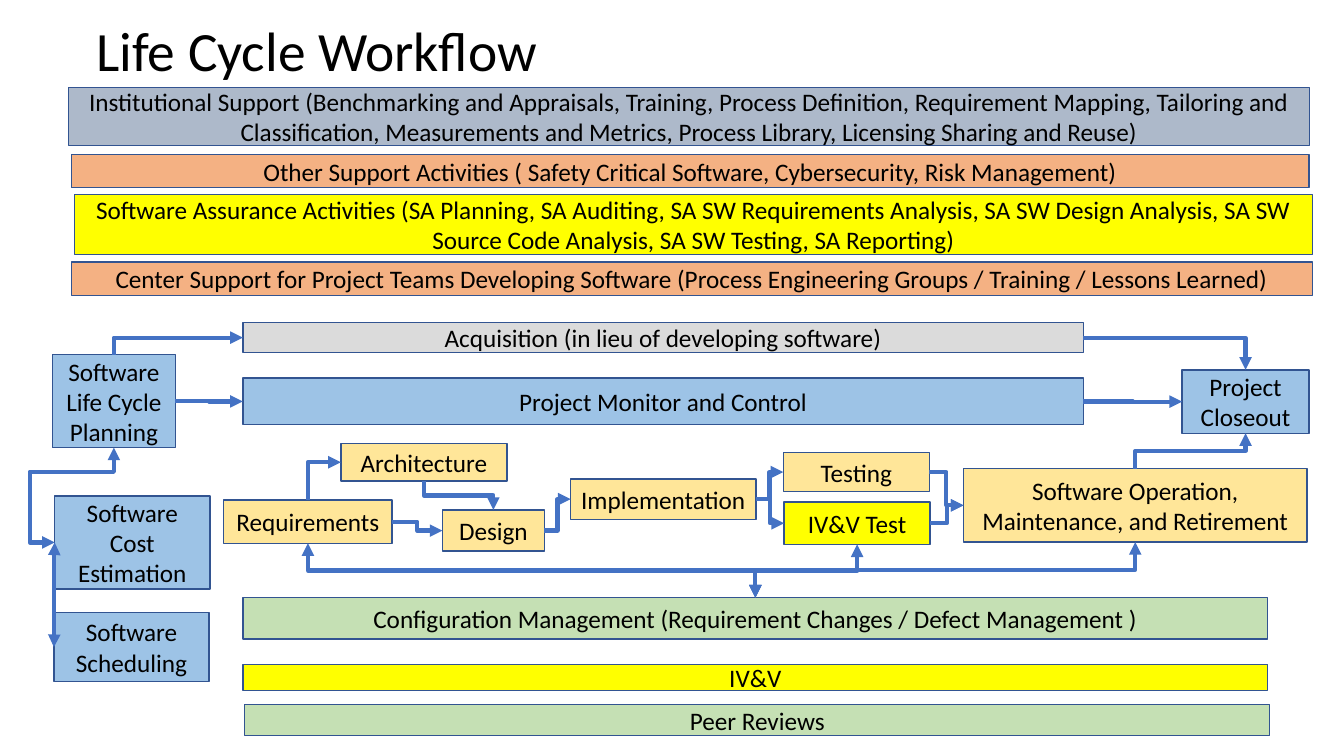
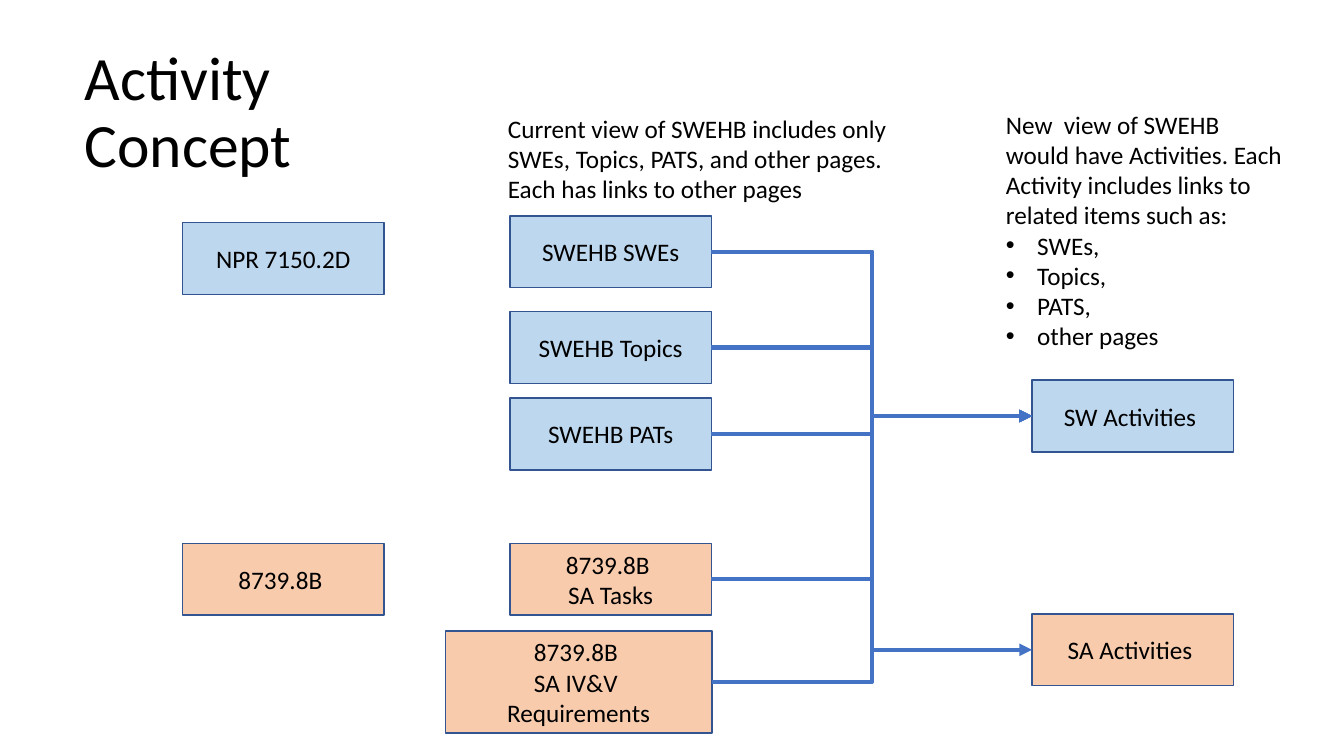
from dataclasses import dataclass
from enum import IntEnum

from lxml.etree import SubElement
from pptx import Presentation
from pptx.dml.color import RGBColor
from pptx.enum.shapes import MSO_CONNECTOR, MSO_SHAPE
from pptx.enum.text import MSO_ANCHOR, PP_ALIGN
from pptx.oxml.ns import qn
from pptx.shapes.autoshape import Shape
from pptx.shapes.connector import Connector
from pptx.slide import Slide
from pptx.text.text import TextFrame
from pptx.util import Cm, Pt


@dataclass(frozen=True)
class Theme:
    font: str = "Calibri"
    ink: str = "000000"
    outline: str = "325491"
    flow: str = "4472C4"
    acquisition: str = "DBDBDB"
    project: str = "9DC3E6"
    engineering: str = "FFE699"
    assurance: str = "FFFF00"
    control: str = "C5E0B4"
    support: str = "F4B183"
    institution: str = "ADB9CA"
    handbook: str = "BDD7EE"
    standard: str = "F8CBAD"
    body_size: float = 18
    workflow_title_size: float = 39.6
    concept_title_size: float = 44
    outline_width: float = 1
    flow_width: float = 3


THEME = Theme()


class Side(IntEnum):
    TOP = 0
    LEFT = 1
    BOTTOM = 2
    RIGHT = 3

    @property
    def vertical(self) -> bool:
        return self in (Side.TOP, Side.BOTTOM)


@dataclass(frozen=True)
class Area:
    left: float
    top: float
    width: float
    height: float

    def lengths(self) -> tuple[Cm, Cm, Cm, Cm]:
        return Cm(self.left), Cm(self.top), Cm(self.width), Cm(self.height)


@dataclass(frozen=True)
class Step:
    lines: tuple[str, ...]
    fill: str
    area: Area


@dataclass(frozen=True)
class Flow:
    source: str
    leaves: Side
    target: str
    enters: Side
    both_ways: bool = False
    bends: tuple[float, ...] = ()


def step(text: str, fill: str, left: float, top: float,
         width: float = 5.08, height: float = 1.81) -> Step:
    return Step(tuple(text.split("\n")), fill, Area(left, top, width, height))


WORKFLOW_STEPS = {
    "institution": step(
        "Institutional Support (Benchmarking and Appraisals, Training, Process Definition, "
        "Requirement Mapping, Tailoring and Classification, Measurements and Metrics, "
        "Process Library, Licensing Sharing and Reuse)",
        THEME.institution, 1.73, 2.21, 31.27, 1.45),
    "other": step(
        "Other Support Activities ( Safety Critical Software, Cybersecurity, Risk Management)",
        THEME.support, 1.8, 3.89, 31.19, 0.84),
    "assurance": step(
        "Software Assurance Activities (SA Planning, SA Auditing, SA SW Requirements Analysis, "
        "SA SW Design Analysis, SA SW Source Code Analysis, SA SW Testing, SA Reporting)",
        THEME.assurance, 1.88, 4.9, 31.19, 1.52),
    "center": step(
        "Center Support for Project Teams Developing Software "
        "(Process Engineering Groups / Training / Lessons Learned)",
        THEME.support, 1.8, 6.6, 31.27, 0.84),
    "acquisition": step("Acquisition (in lieu of developing software)",
                        THEME.acquisition, 6.12, 8.13, 21.18, 0.76),
    "monitor": step("Project Monitor and Control", THEME.project, 6.12, 9.53, 21.18, 1.17),
    "planning": step("Software Life Cycle Planning", THEME.project, 1.32, 8.94, 3.1, 2.34),
    "cost": step("Software Cost Estimation", THEME.project, 1.38, 12.5, 3.91, 2.34),
    "scheduling": step("Software Scheduling", THEME.project, 1.36, 15.44, 3.91, 1.73),
    "closeout": step("Project Closeout", THEME.project, 29.79, 9.32, 3.2, 1.6),
    "requirements": step("Requirements", THEME.engineering, 5.64, 12.6, 4.24, 1.09),
    "architecture": step("Architecture", THEME.engineering, 8.59, 11.18, 4.19, 0.94),
    "design": step("Design", THEME.engineering, 11.15, 12.85, 2.57, 1.04),
    "implementation": step("Implementation", THEME.engineering, 14.38, 12.07, 4.67, 1.02),
    "testing": step("Testing", THEME.engineering, 19.74, 11.4, 3.68, 0.99),
    "ivv_test": step("IV&V Test", THEME.assurance, 19.76, 12.65, 3.68, 1.07),
    "operation": step("Software Operation, Maintenance, and Retirement",
                      THEME.engineering, 24.28, 11.81, 8.66, 1.85),
    "configuration": step(
        "Configuration Management (Requirement Changes / Defect Management )",
        THEME.control, 6.12, 15.06, 25.83, 1.04),
    "ivv": step("IV&V", THEME.assurance, 6.12, 16.74, 25.83, 0.66),
    "reviews": step("Peer Reviews", THEME.control, 6.17, 17.75, 25.83, 0.79),
}

WORKFLOW_FLOWS = [
    Flow("planning", Side.TOP, "acquisition", Side.LEFT),
    Flow("planning", Side.RIGHT, "monitor", Side.LEFT),
    Flow("planning", Side.BOTTOM, "cost", Side.LEFT, True, (0.255, 1.423)),
    Flow("cost", Side.LEFT, "scheduling", Side.LEFT, True, (32,)),
    Flow("acquisition", Side.RIGHT, "closeout", Side.TOP),
    Flow("monitor", Side.RIGHT, "closeout", Side.LEFT),
    Flow("requirements", Side.TOP, "architecture", Side.LEFT),
    Flow("requirements", Side.RIGHT, "design", Side.LEFT),
    Flow("architecture", Side.BOTTOM, "design", Side.TOP),
    Flow("design", Side.RIGHT, "implementation", Side.LEFT),
    Flow("implementation", Side.RIGHT, "testing", Side.LEFT),
    Flow("implementation", Side.RIGHT, "ivv_test", Side.LEFT),
    Flow("testing", Side.RIGHT, "operation", Side.LEFT),
    Flow("ivv_test", Side.RIGHT, "operation", Side.LEFT),
    Flow("operation", Side.TOP, "closeout", Side.BOTTOM),
] + [
    Flow(changed, Side.BOTTOM, "configuration", Side.TOP, True)
    for changed in ("requirements", "ivv_test", "operation")
]

CONCEPT_STEPS = {
    "npr": step("NPR 7150.2D", THEME.handbook, 4.6, 5.61),
    "standard": step("8739.8B ", THEME.standard, 4.6, 13.69),
    "swes": step("SWEHB SWEs", THEME.handbook, 12.85, 5.44),
    "topics": step("SWEHB Topics", THEME.handbook, 12.85, 7.85),
    "pats": step("SWEHB PATs", THEME.handbook, 12.85, 10.03),
    "tasks": step("8739.8B \nSA Tasks", THEME.standard, 12.85, 13.69),
    "ivv": step("8739.8B \nSA IV&V \nRequirements", THEME.standard, 11.23, 15.9, 6.71, 2.57),
    "sw_activities": step("SW Activities ", THEME.handbook, 26.01, 9.58),
    "sa_activities": step("SA Activities ", THEME.standard, 26.01, 15.47),
}

CONCEPT_FLOWS = [
    Flow(page, Side.RIGHT, "sw_activities", Side.LEFT)
    for page in ("swes", "topics", "pats", "tasks", "ivv")
] + [Flow("swes", Side.RIGHT, "sa_activities", Side.LEFT)]


def add_run(paragraph, text: str, size: float) -> None:
    run = paragraph.add_run()
    run.text = text
    run.font.name = THEME.font
    run.font.size = Pt(size)
    run.font.color.rgb = RGBColor.from_string(THEME.ink)


def write_lines(frame: TextFrame, lines: tuple[str, ...], align: PP_ALIGN) -> None:
    frame.word_wrap = True
    for index, line in enumerate(lines):
        paragraph = frame.add_paragraph() if index else frame.paragraphs[0]
        paragraph.alignment = align
        add_run(paragraph, line, THEME.body_size)


def add_title(slide: Slide, lines: tuple[str, ...], size: float, area: Area) -> None:
    frame = slide.shapes.add_textbox(*area.lengths()).text_frame
    frame.word_wrap = True
    frame.vertical_anchor = MSO_ANCHOR.MIDDLE
    paragraph = frame.paragraphs[0]
    paragraph.line_spacing = 0.9
    for index, line in enumerate(lines):
        if index:
            paragraph.add_line_break()
        add_run(paragraph, line, size)


def add_note(slide: Slide, area: Area, intro: str, items: tuple[str, ...] = ()) -> None:
    frame = slide.shapes.add_textbox(*area.lengths()).text_frame
    write_lines(frame, (intro, *items), PP_ALIGN.LEFT)
    for paragraph in frame.paragraphs[1:]:
        properties = paragraph._p.get_or_add_pPr()
        properties.set("marL", str(Cm(0.79)))
        properties.set("indent", str(-Cm(0.79)))
        SubElement(properties, qn("a:buFont"), typeface="Arial")
        SubElement(properties, qn("a:buChar"), char="•")


def add_step(slide: Slide, item: Step) -> Shape:
    shape = slide.shapes.add_shape(MSO_SHAPE.FLOWCHART_PROCESS, *item.area.lengths())
    shape.shadow.inherit = False
    shape.fill.solid()
    shape.fill.fore_color.rgb = RGBColor.from_string(item.fill)
    shape.line.color.rgb = RGBColor.from_string(THEME.outline)
    shape.line.width = Pt(THEME.outline_width)
    shape.text_frame.vertical_anchor = MSO_ANCHOR.MIDDLE
    write_lines(shape.text_frame, item.lines, PP_ALIGN.CENTER)
    return shape


def turn_upright(connector: Connector) -> None:
    across = connector.end_x - connector.begin_x
    down = connector.end_y - connector.begin_y
    middle_x = (connector.begin_x + connector.end_x) // 2
    middle_y = (connector.begin_y + connector.end_y) // 2
    connector.width, connector.height = abs(down), abs(across)
    connector.left = middle_x - abs(down) // 2
    connector.top = middle_y - abs(across) // 2
    frame = connector._element.spPr.find(qn("a:xfrm"))
    frame.set("rot", str((90 if across * down < 0 else 270) * 60000))
    frame.set("flipH", str(int(across > 0)))
    frame.set("flipV", str(int(down < 0)))


def add_flow(slide: Slide, flow: Flow, shapes: dict[str, Shape]) -> None:
    connector = slide.shapes.add_connector(MSO_CONNECTOR.ELBOW, 0, 0, 0, 0)
    connector.begin_connect(shapes[flow.source], int(flow.leaves))
    connector.end_connect(shapes[flow.target], int(flow.enters))
    if flow.leaves.vertical:
        turn_upright(connector)

    turns_corner = flow.leaves.vertical != flow.enters.vertical
    segments = 2 + len(flow.bends) if turns_corner else 3
    properties = connector._element.spPr
    geometry = properties.find(qn("a:prstGeom"))
    geometry.set("prst", f"bentConnector{segments}")
    guides = geometry.find(qn("a:avLst"))
    if guides is None:
        guides = SubElement(geometry, qn("a:avLst"))
    for number, bend in enumerate(flow.bends, 1):
        name = "adj" if segments == 3 else f"adj{number}"
        SubElement(guides, qn("a:gd"), name=name, fmla=f"val {round(bend * 100000)}")

    connector.line.color.rgb = RGBColor.from_string(THEME.flow)
    connector.line.width = Pt(THEME.flow_width)
    stroke = properties.find(qn("a:ln"))
    if flow.both_ways:
        SubElement(stroke, qn("a:headEnd"), type="triangle")
    SubElement(stroke, qn("a:tailEnd"), type="triangle")
    SubElement(properties, qn("a:effectLst"))


def draw_diagram(slide: Slide, steps: dict[str, Step], flows: list[Flow]) -> None:
    shapes = {key: add_step(slide, item) for key, item in steps.items()}
    for flow in flows:
        add_flow(slide, flow, shapes)


def main() -> None:
    deck = Presentation()
    deck.slide_width, deck.slide_height = Cm(33.87), Cm(19.05)
    blank = deck.slide_layouts[6]

    workflow = deck.slides.add_slide(blank)
    add_title(workflow, ("Life Cycle Workflow",), THEME.workflow_title_size,
              Area(2.18, 0.53, 29.21, 1.63))
    draw_diagram(workflow, WORKFLOW_STEPS, WORKFLOW_FLOWS)

    concept = deck.slides.add_slide(blank)
    add_title(concept, ("Activity ", "Concept"), THEME.concept_title_size,
              Area(1.88, 1.04, 29.21, 3.68))
    draw_diagram(concept, CONCEPT_STEPS, CONCEPT_FLOWS)
    add_note(concept, Area(12.55, 2.72, 10.72, 2.57),
             "Current view of SWEHB includes only SWEs, Topics, PATS, and other pages. "
             "Each has links to other pages")
    add_note(concept, Area(25.1, 2.62, 7.59, 7.19),
             "New  view of SWEHB would have Activities. "
             "Each Activity includes links to related items such as:",
             ("SWEs,", "Topics,", "PATS,", "other pages"))

    deck.save("out.pptx")


if __name__ == "__main__":
    main()
